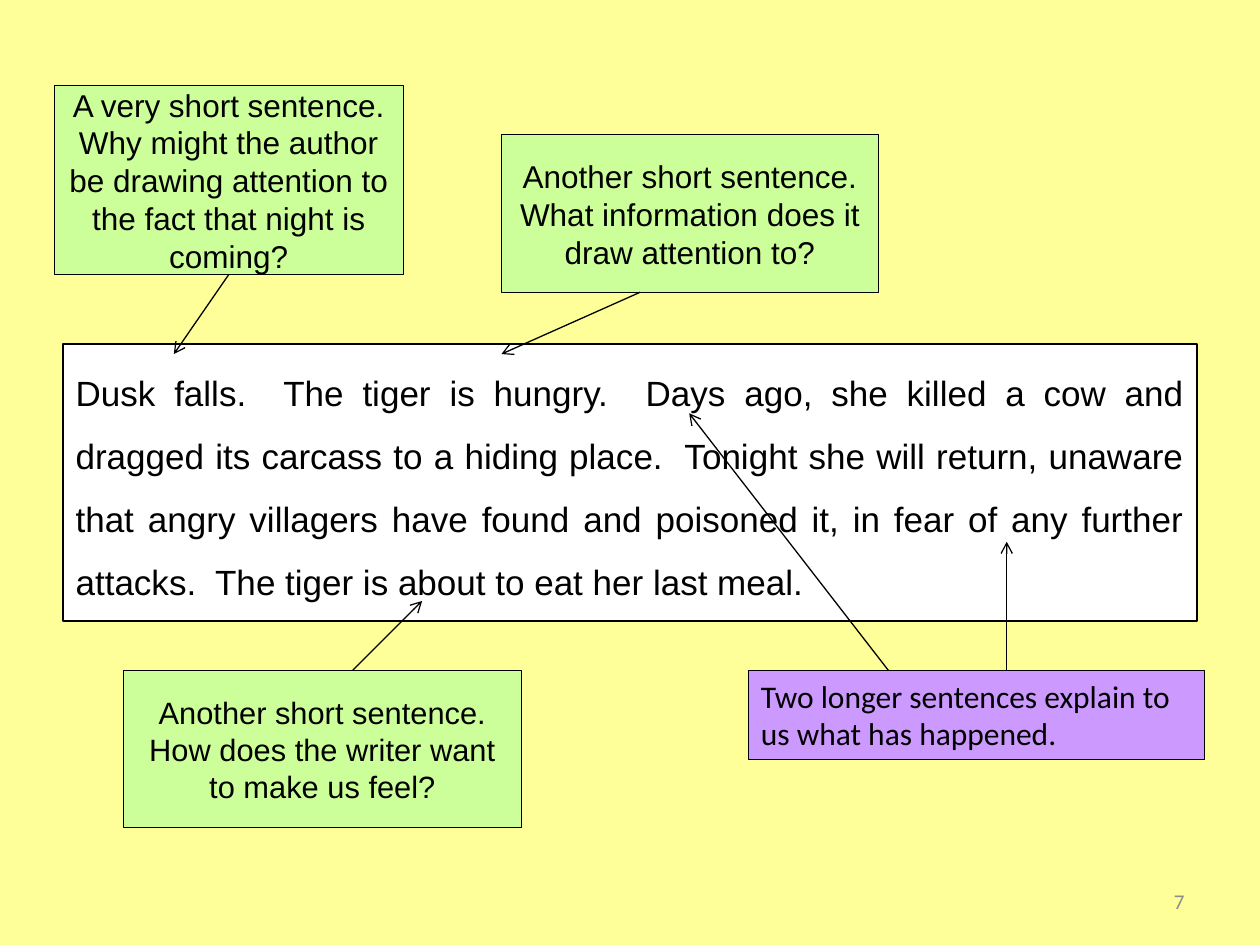
import copy

import pptx
import pptx.dml.color
import pptx.enum.shapes
import pptx.enum.text
import pptx.oxml
import pptx.oxml.ns
import pptx.util

COLUMNS, ROWS = 100, 75
GREEN, PURPLE, WHITE, BLACK = "CCFF99", "CC99FF", "FFFFFF", "000000"
ALIGN = pptx.enum.text.PP_ALIGN
ANCHOR = pptx.enum.text.MSO_ANCHOR

deck = pptx.Presentation()
deck.slide_width = pptx.util.Inches(10)
deck.slide_height = pptx.util.Inches(7.5)


def color(value):
    return pptx.dml.color.RGBColor.from_string(value)


def across(columns):
    return round(deck.slide_width * columns / COLUMNS)


def down(rows):
    return round(deck.slide_height * rows / ROWS)


def place(shape, box):
    left, top, width, height = box
    shape.left, shape.top = across(left), down(top)
    shape.width, shape.height = across(width), down(height)


def write(shape, text, size=18, font="Arial", ink=BLACK, align=ALIGN.CENTER,
          anchor=ANCHOR.MIDDLE, spacing=1.0, before=0):
    frame = shape.text_frame
    frame.word_wrap = True
    frame.auto_size = pptx.enum.text.MSO_AUTO_SIZE.NONE
    frame.vertical_anchor = anchor
    para = frame.paragraphs[0]
    para.text = text
    para.alignment = align
    para.line_spacing = spacing
    para.space_before = pptx.util.Pt(before)
    for span in para.runs:
        span.font.size = pptx.util.Pt(size)
        span.font.name = font
        span.font.color.rgb = color(ink)
    for line_break in para._p.findall(pptx.oxml.ns.qn("a:br")):
        line_break.insert(0, copy.deepcopy(para.runs[0]._r.rPr))
    return para


def paint(shape, fill):
    shape.fill.solid()
    shape.fill.fore_color.rgb = color(fill)
    shape.line.color.rgb = color(BLACK)
    shape.line.width = pptx.util.Pt(0.75)


def add_title_note(page, box, text):
    title = page.shapes.title
    place(title, box)
    paint(title, GREEN)
    write(title, text)
    return title


def add_passage(page, box, text):
    body = page.placeholders[1]
    place(body, box)
    paint(body, WHITE)
    para = write(body, text, size=20, align=ALIGN.JUSTIFY, anchor=ANCHOR.TOP,
                 spacing=1.5, before=4)
    settings = para._p.get_or_add_pPr()
    settings.set("marL", "0")
    settings.set("indent", "0")
    settings.append(pptx.oxml.parse_xml(
        f"<a:buNone {pptx.oxml.ns.nsdecls('a')}/>"))


def add_note(page, box, text, fill=GREEN, **style):
    note = page.shapes.add_shape(
        pptx.enum.shapes.MSO_SHAPE.RECTANGLE, 0, 0, 0, 0)
    note.shadow.inherit = False
    place(note, box)
    paint(note, fill)
    write(note, text, **style)


def add_arrow(page, start, end, source=None):
    arrow = page.shapes.add_connector(
        pptx.enum.shapes.MSO_CONNECTOR.STRAIGHT,
        across(start[0]), down(start[1]), across(end[0]), down(end[1]))
    if source is not None:
        arrow.begin_connect(source, 2)
    arrow.line.color.rgb = color(BLACK)
    arrow.line.width = pptx.util.Pt(0.75)
    namespace = pptx.oxml.ns.nsdecls("a")
    arrow.line._get_or_add_ln().append(pptx.oxml.parse_xml(
        f'<a:tailEnd {namespace} type="arrow"/>'))
    arrow._element.spPr.append(pptx.oxml.parse_xml(
        f"<a:effectLst {namespace}/>"))


def add_page_number(page, box, number):
    label = page.shapes.add_textbox(0, 0, 0, 0)
    place(label, box)
    write(label, number, size=12, font="Calibri", ink="8C8C8C",
          align=ALIGN.RIGHT)


def build_page():
    page = deck.slides.add_slide(deck.slide_layouts[1])
    page.background.fill.solid()
    page.background.fill.fore_color.rgb = color("FFFF99")

    title = add_title_note(
        page, (4.3, 6.8, 27.7, 15),
        "A very short sentence.\nWhy might the author be drawing attention "
        "to the fact that night is coming?")
    add_passage(
        page, (5, 27.3, 90, 22),
        "Dusk falls.  The tiger is hungry.  Days ago, she killed a cow and "
        "dragged its carcass to a hiding place.  Tonight she will return, "
        "unaware that angry villagers have found and poisoned it, in fear of "
        "any further attacks.  The tiger is about to eat her last meal.")
    add_note(page, (39.8, 10.7, 29.9, 12.5),
             "Another short sentence.\n"
             "What information does it draw attention to?")
    add_note(page, (9.8, 53.2, 31.6, 12.5),
             "Another short sentence.\n"
             "How does the writer want to make us feel?", size=17.6)
    add_arrow(page, (18.2, 21.8), (13.8, 28.1), source=title)
    add_arrow(page, (50.8, 23.2), (39.8, 28.1))
    add_arrow(page, (28, 53.2), (33.5, 47.7))
    add_note(page, (59.4, 53.2, 36.2, 7.1),
             "Two longer sentences explain to us what has happened.",
             fill=PURPLE, font="Calibri", align=ALIGN.LEFT, anchor=ANCHOR.TOP)
    add_arrow(page, (70.5, 53.2), (54.7, 32.8))
    add_arrow(page, (79.9, 53.2), (79.9, 43))
    add_page_number(page, (71.7, 69.5, 23.3, 4), "7")


if __name__ == "__main__":
    build_page()
    deck.save("out.pptx")
